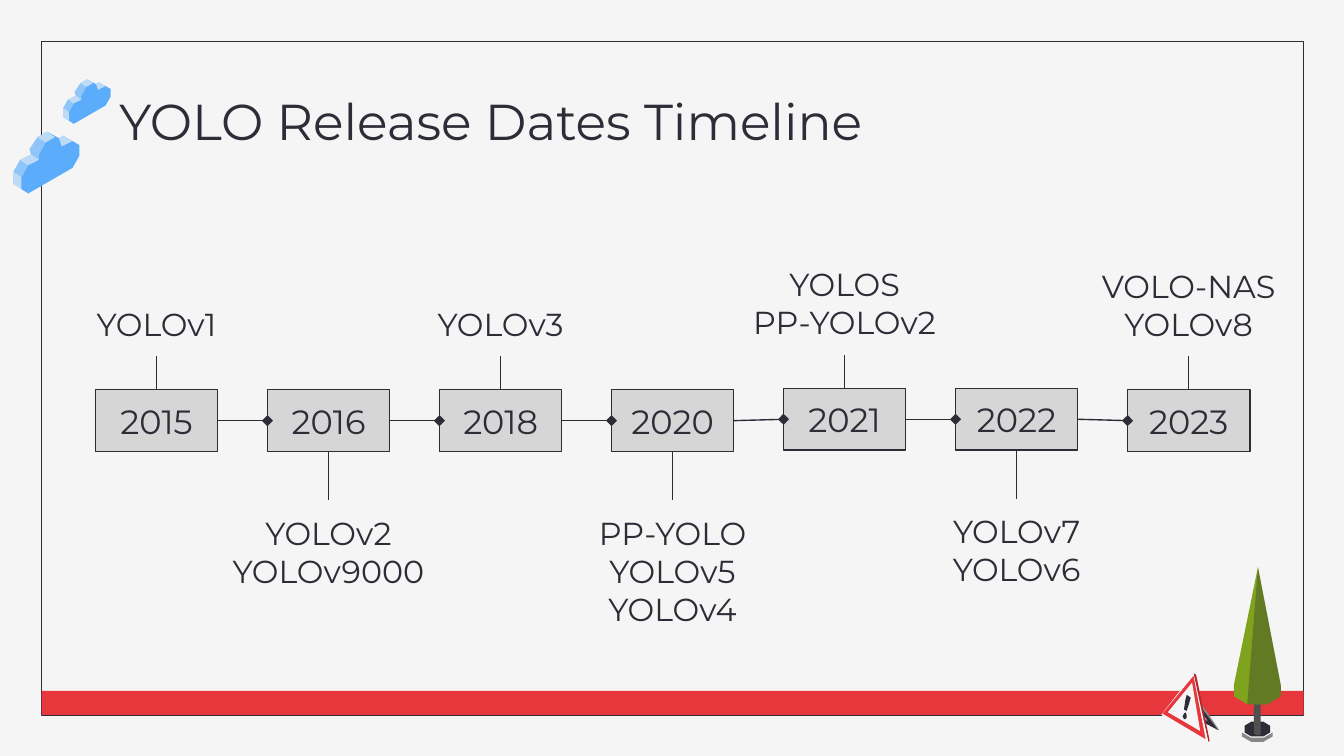
"""Build the YOLO release dates timeline slide."""
from dataclasses import dataclass
from typing import NamedTuple

from lxml import etree
from pptx import Presentation
from pptx import util as u
from pptx.dml.color import RGBColor
from pptx.enum import shapes, text
from pptx.oxml import ns


@dataclass(frozen=True)
class Theme:
    font: str = "Montserrat"
    title: float = 27
    label: float = 17
    year: float = 18
    rule: float = 0.75
    paper: str = "F5F5F5"
    ink: str = "2D2C37"
    red: str = "E7363C"
    dark_red: str = "B1282F"
    grey: str = "878787"
    trunk: str = "505050"
    sky: str = "5BADFB"
    leaf: str = "7FA31D"
    soil: str = "5E4439"
    soil_top: str = "A39C95"


@dataclass(frozen=True)
class Grid:
    left: float = 0.71
    pitch: float = 1.28
    top: float = 2.9
    box_w: float = 0.91
    box_h: float = 0.46

    def x(self, column: int) -> float:
        return self.left + column * self.pitch


class Milestone(NamedTuple):
    year: str
    names: str
    label_h: float
    rise: float = 0


class Side(NamedTuple):
    site: int
    stem: float
    label_w: float
    anchor: text.MSO_ANCHOR


class Facet(NamedTuple):
    color: str
    contours: tuple
    alpha: int = 100


T = Theme()
G = Grid()
ABOVE = Side(0, -0.25, 1.97, text.MSO_ANCHOR.BOTTOM)
BELOW = Side(2, 0.36, 1.66, text.MSO_ANCHOR.TOP)

MILESTONES = (
    Milestone("2015", "YOLOv1", 1.01),
    Milestone("2016", "YOLOv2\nYOLOv9000", 0.81),
    Milestone("2018", "YOLOv3", 1.01),
    Milestone("2020", "PP-YOLO\nYOLOv5\nYOLOv4", 1.07),
    Milestone("2021", "YOLOS\nPP-YOLOv2", 1.01, 0.01),
    Milestone("2022", "YOLOv7\nYOLOv6", 0.81, 0.01),
    Milestone("2023", "VOLO-NAS\nYOLOv8", 1.09),
)

CLOUD = (
    Facet(T.sky, (((25, 0), (18, 4), (12, 13), (13, 17), (5, 21), (0, 30), (0, 39),
                   (11, 46), (44, 27), (49, 18), (49, 10), (37, 3), (34, 5)),)),
    Facet(T.paper, (((25, 0), (18, 4), (24, 8), (31, 4)),), 64),
    Facet(T.paper, (((13, 17), (5, 21), (11, 25), (19, 21)),), 64),
    Facet(T.paper, (((5, 21), (0, 30), (6, 34), (11, 25)),), 34),
    Facet(T.paper, (((12, 13), (12, 17), (19, 21), (19, 17)),), 34),
    Facet(T.paper, (((0, 30), (0, 39), (6, 43), (6, 34)),), 64),
    Facet(T.paper, (((37, 3), (34, 5), (36, 11), (44, 7)),), 64),
    Facet(T.paper, (((18, 4), (12, 13), (19, 17), (24, 8)),), 34),
)

TREE = (
    Facet(T.grey, (((6, 123), (6, 126), (13, 130), (22, 130), (29, 126), (29, 123)),)),
    Facet(T.paper, (((13, 114), (6, 118), (6, 123), (13, 127), (22, 127), (29, 123),
                     (29, 118), (22, 114)),)),
    Facet(T.soil_top, (((14, 116), (9, 118), (9, 120), (26, 120), (26, 118), (21, 116)),)),
    Facet(T.soil, (((14, 118), (9, 120), (9, 122), (14, 125), (21, 125), (26, 122),
                    (26, 120), (21, 118)),)),
    Facet(T.ink, (((13, 115), (8, 118), (8, 123), (13, 126), (22, 126), (27, 123),
                   (27, 118), (22, 115)),)),
    Facet(T.trunk, (((17, 96), (15, 97), (15, 124), (17, 125), (19, 125), (20, 124),
                     (20, 97), (19, 96)),)),
    Facet(T.leaf, (((18, 0), (0, 88), (0, 96), (10, 102), (25, 102), (35, 96), (35, 88)),)),
    Facet(T.ink, (((18, 0), (10, 102), (25, 102), (35, 96), (35, 88)),), 34),
)

SIGN = (
    Facet(T.grey, (((22, 11), (43, 42), (42, 42), (20, 30), (22, 28), (36, 36), (22, 16)),)),
    Facet(T.ink, (((20, 12), (42, 42), (19, 30), (21, 29), (35, 36), (21, 17)),)),
    Facet(T.dark_red, (((24, 0), (26, 1), (36, 50), (35, 51)),)),
    Facet(T.paper, (((24, 0), (35, 51), (0, 31)),)),
    Facet(T.red, (((24, 2), (33, 49), (1, 30)),)),
    Facet(T.paper, (((23, 7), (29, 43), (5, 29)),)),
    Facet(T.ink, (((19, 16), (22, 18), (21, 22), (19, 28), (17, 27), (18, 20)),
                  ((18, 29), (19, 31), (19, 33), (18, 34), (17, 34), (16, 32), (17, 30)))),
)


def paint(sp, fill: str = "", line: str = "", alpha: int = 100) -> None:
    """Give a shape a flat fill and outline, either of which may be absent."""
    sp.shadow.inherit = False
    if fill:
        sp.fill.solid()
        sp.fill.fore_color.rgb = RGBColor.from_string(fill)
        if alpha < 100:
            clr = sp.fill._xPr.find(".//" + ns.qn("a:srgbClr"))
            etree.SubElement(clr, ns.qn("a:alpha")).set("val", str(alpha * 1000))
    else:
        sp.fill.background()
    if line:
        sp.line.color.rgb = RGBColor.from_string(line)
        sp.line.width = u.Pt(T.rule)
    else:
        sp.line.fill.background()


def write(sp, words: str, size: float, anchor, align) -> None:
    """Fill a shape with wrapped text in the theme font."""
    tf = sp.text_frame
    tf.text = words
    tf.word_wrap = True
    tf.vertical_anchor = anchor
    tf.margin_left = tf.margin_right = tf.margin_top = tf.margin_bottom = u.Inches(0.1)
    for p in tf.paragraphs:
        p.alignment = align
        for r in p.runs:
            r.font.name = T.font
            r.font.size = u.Pt(size)
            r.font.color.rgb = RGBColor.from_string(T.ink)


def add_rect(slide, *box: float):
    """Add a rectangle at a left, top, width and height in inches."""
    return slide.shapes.add_shape(shapes.MSO_SHAPE.RECTANGLE, *map(u.Inches, box))


def add_text(slide, box: tuple, words: str, size: float, anchor, align) -> None:
    """Add a text box at a left, top, width and height in inches."""
    write(slide.shapes.add_textbox(*map(u.Inches, box)), words, size, anchor, align)


def draw_facets(slide, facets: tuple, x: float, y: float, scale: float = 1) -> None:
    """Draw facets given in hundredths of an inch from a corner."""
    for facet in facets:
        first, *rest = facet.contours
        fb = slide.shapes.build_freeform(*first[0], scale=u.Inches(0.01) * scale)
        fb.add_line_segments(first[1:], close=True)
        for contour in rest:
            fb.move_to(*contour[0])
            fb.add_line_segments(contour[1:], close=True)
        sp = fb.convert_to_shape(u.Inches(x), u.Inches(y))
        paint(sp, facet.color, alpha=facet.alpha)


def add_line(slide, x1: float, y1: float, x2: float, y2: float):
    """Add a thin straight connector between two points in inches."""
    cx = slide.shapes.add_connector(shapes.MSO_CONNECTOR.STRAIGHT, *map(u.Inches, (x1, y1, x2, y2)))
    cx.line.color.rgb = RGBColor.from_string(T.ink)
    cx.line.width = u.Pt(T.rule)
    etree.SubElement(cx._element.spPr, ns.qn("a:effectLst"))
    return cx


def add_milestone(slide, column: int, m: Milestone):
    """Draw one year box with its stem and label and return the box."""
    side = BELOW if column % 2 else ABOVE
    x, y = G.x(column), G.top - m.rise
    sp = add_rect(slide, x, y, G.box_w, G.box_h)
    paint(sp, T.grey, T.ink, 28)
    write(sp, m.year, T.year, text.MSO_ANCHOR.MIDDLE, text.PP_ALIGN.CENTER)
    mid = x + G.box_w / 2
    start = y + (G.box_h if side is BELOW else 0)
    end = start + side.stem
    add_line(slide, mid, start, mid, end).begin_connect(sp, side.site)
    top = end if side is BELOW else end - m.label_h
    add_text(slide, (mid - side.label_w / 2, top, side.label_w, m.label_h),
             m.names, T.label, side.anchor, text.PP_ALIGN.CENTER)
    return sp


def link(slide, left, right) -> None:
    """Join two year boxes with a line ending in a diamond."""
    cx = add_line(slide, 0, 0, 1, 0)
    cx.begin_connect(left, 3)
    cx.end_connect(right, 1)
    etree.SubElement(cx.line._get_or_add_ln(), ns.qn("a:tailEnd")).set("type", "diamond")


def main() -> None:
    """Build and save the slide."""
    prs = Presentation()
    prs.slide_width = u.Inches(10)
    prs.slide_height = prs.slide_width * 9 // 16
    slide = prs.slides.add_slide(prs.slide_layouts[6])
    slide.background.fill.solid()
    slide.background.fill.fore_color.rgb = RGBColor.from_string(T.paper)
    paint(add_rect(slide, 0.31, 0.31, 9.39, 5.01), line=T.ink)
    paint(add_rect(slide, 0.31, 5.14, 9.39, 0.18), T.red)
    draw_facets(slide, CLOUD, 0.1, 0.98)
    draw_facets(slide, CLOUD, 0.47, 0.59, 0.72)
    draw_facets(slide, TREE, 9.18, 4.22)
    draw_facets(slide, SIGN, 8.64, 5.01)
    add_text(slide, (0.79, 0.57, 8.43, 0.63), "YOLO Release Dates Timeline", T.title,
             text.MSO_ANCHOR.TOP, text.PP_ALIGN.LEFT)
    boxes = [add_milestone(slide, i, m) for i, m in enumerate(MILESTONES)]
    for left, right in zip(boxes, boxes[1:]):
        link(slide, left, right)
    prs.save("out.pptx")


if __name__ == "__main__":
    main()
